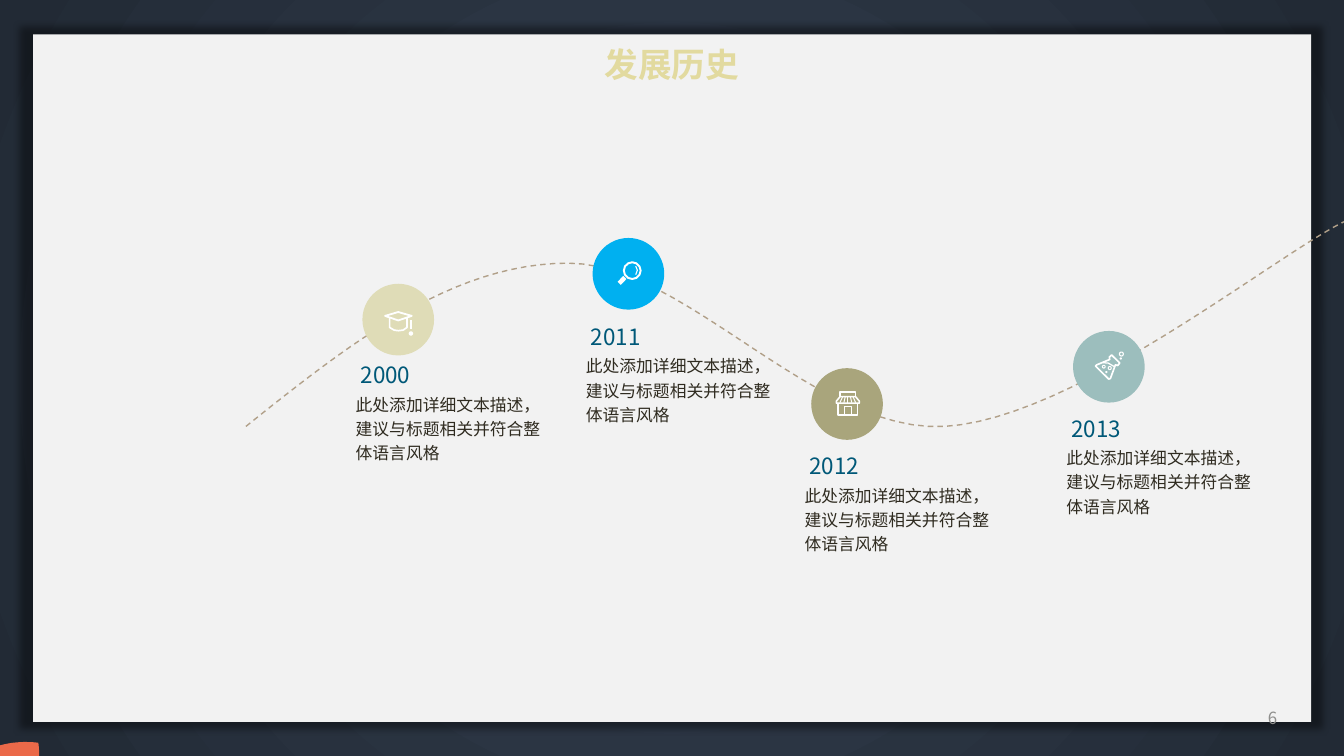
"""Build a company history slide: four milestones along a dashed curve."""
from lxml import etree
from pptx import Presentation
from pptx.dml.color import RGBColor
from pptx.enum.dml import MSO_LINE
from pptx.enum.shapes import MSO_CONNECTOR, MSO_SHAPE
from pptx.enum.text import MSO_ANCHOR, PP_ALIGN
from pptx.oxml.ns import qn
from pptx.util import Pt

DASH = MSO_LINE.DASH
STRAIGHT = MSO_CONNECTOR.STRAIGHT
OVAL, RECT = MSO_SHAPE.OVAL, MSO_SHAPE.RECTANGLE
TOP, MIDDLE = MSO_ANCHOR.TOP, MSO_ANCHOR.MIDDLE
LEFT, CENTER, RIGHT = PP_ALIGN.LEFT, PP_ALIGN.CENTER, PP_ALIGN.RIGHT

FONT = "Noto Sans CJK SC"
COLORS = {
    "glow": "333F50", "edge": "222A35", "panel": "F2F2F2", "title": "E2DA9F",
    "curve": "B1A089", "year": "005878", "body": "2F2B20", "page": "8F8F8D",
    "white": "FFFFFF", "corner": "EB6949", "black": "000000",
    "sand": "DFDCB7", "sky": "00B0F0", "olive": "A9A57C", "teal": "9CBEBD",
}
TITLE = "发展历史"
BODY = "此处添加详细文本描述，建议与标题相关并符合整体语言风格"
PAGE = "6"
STEPS = [
    ("2000", 284.5, 228.3, 26, "sand", "cap"),
    ("2011", 448.9, 195.6, 31.5, "sky", "lens"),
    ("2012", 605.1, 288.6, 31, "olive", "shop"),
    ("2013", 792.1, 262, 30.7, "teal", "flask"),
]
DISC = 51.2
CURVE = (175.7, 304.6), [
    ((249, 246), (322.5, 188), (406, 188)),
    ((489, 188), (582.5, 309.6), (674.6, 304.6)),
    ((766.8, 299.5), (907, 185), (960, 158.4)),
]
CORNER = (-46.8, 588.2), [
    ((-38.9, 564.5), (-20.9, 545), (-20.9, 545)),
    ((-3.6, 525.6), (27.4, 530.6), (27.4, 530.6)),
    ((27.4, 530.6), (32.4, 561.6), (13, 578.2)),
    ((13, 578.2), (-6.5, 596.9), (-30.2, 604.8)),
]
ICONS = {
    "cap": ([
        ([(-9.4, -2.6), (0, -5.4), (9.6, -2.6), (0, 0.6)], 1.3, True),
        ([(-6.2, -1.2), (-6.2, 5.6), (-3, 7.5), (0, 7.9), (3.5, 7.5),
          (6.2, 5.6), (6.2, -1.2)], 1.2, False),
        ([(9, 0.4), (9, 6.8)], 1.3, False),
    ], [(9, 9.9, 1.6, 0)]),
    "lens": ([
        ([(-2.6, 2.6), (-6.6, 6.8)], 3.2, False),
        ([(5.2, -5.5), (6.4, -2.6), (5.2, 0.6)], 0.8, False),
    ], [(2.7, -2.3, 6, 1.4)]),
    "shop": ([
        ([(-5, -8.7), (6, -8.7), (6, -5.5), (-5, -5.5)], 1, True),
        ([(-5, -5.3), (-7.7, -2), (-7.7, -0.6), (8.7, -0.6), (8.7, -2),
          (6, -5.3)], 1.1, True),
        ([(-6.3, 0), (-6.3, 8), (7.3, 8), (7.3, 0)], 1.1, False),
        ([(-1.8, 8), (-1.8, 1.6), (2.8, 1.6), (2.8, 8)], 0.5, False),
    ] + [([(0.5 + 1.9 * k, -5), (0.5 + 2.8 * k, -1)], 0.7, False)
         for k in range(-2, 3)], []),
    "flask": ([
        ([(-9.5, -0.5), (-8.8, -1.3), (0.6, -5.2), (0.4, -7), (2, -8.4),
          (7.8, -2.7), (6.3, -0.9), (4.7, -1.4), (1.1, 8.4), (-0.1, 8.8)],
         1.2, True),
        ([(-4.2, -2.9), (-0.5, -2.6), (4, 0)], 0.9, False),
    ], [(0.6, 0.9, 1.1, 0.7), (-3.7, -0.1, 1, 0.7), (8.9, -9.1, 1.4, 0.8),
        (-1.8, 3.8, 0.8, 0), (8.5, -5.9, 0.8, 0)]),
}


def rgb(name):
    return RGBColor.from_string(COLORS[name])


def paint(shape, color, width=0):
    shape.shadow.inherit = False
    if width:
        shape.fill.background()
        shape.line.color.rgb = rgb(color)
        shape.line.width = Pt(width)
    else:
        shape.fill.solid()
        shape.fill.fore_color.rgb = rgb(color)
        shape.line.fill.background()


def write(shape, text, size, color, align=LEFT, anchor=TOP, inset=0, bold=False):
    frame = shape.text_frame
    frame.word_wrap = True
    frame.vertical_anchor = anchor
    frame.margin_left = frame.margin_right = Pt(inset)
    frame.margin_top = frame.margin_bottom = Pt(inset)
    para = frame.paragraphs[0]
    para.alignment = align
    run = para.add_run()
    run.text = text
    font = run.font
    font.name, font.size, font.bold = FONT, Pt(size), bold
    font.color.rgb = rgb(color)
    etree.SubElement(font._element, qn("a:ea")).set("typeface", FONT)
    return para


def label(shapes, box, *args, **more):
    return write(shapes.add_textbox(*map(Pt, box)), *args, **more)


def trace(shapes, points, closed):
    spots = [(Pt(x), Pt(y)) for x, y in points]
    pen = shapes.build_freeform(*spots[0], scale=1.0)
    pen.add_line_segments(spots[1:], close=closed)
    return pen.convert_to_shape()


def disc(shapes, x, y, r, color, width=0):
    box = map(Pt, (x - r, y - r, 2 * r, 2 * r))
    paint(shapes.add_shape(OVAL, *box), color, width)


def bezier(start, bends, count=24):
    points = [start]
    for bend in bends:
        axes = list(zip(points[-1], *bend))
        for t in (step / count for step in range(1, count + 1)):
            u = 1 - t
            points.append(tuple(
                u**3 * p + 3 * u * u * t * q + 3 * u * t * t * r + t**3 * s
                for p, q, r, s in axes))
    return points


def icon(shapes, x, y, strokes, dots):
    for points, width, closed in strokes:
        spots = [(x + dx, y + dy) for dx, dy in points]
        if len(spots) == 2:
            bar = shapes.add_connector(STRAIGHT, *[Pt(v) for p in spots for v in p])
            bar.line.color.rgb = rgb("white")
            bar.line.width = Pt(width)
            etree.SubElement(bar._element.spPr, qn("a:effectLst"))
        else:
            paint(trace(shapes, spots, closed), "white", width)
    for dx, dy, r, width in dots:
        disc(shapes, x + dx, y + dy, r, "white", width)


def backdrop(slide):
    fill = slide.background.fill
    fill.gradient()
    for stop, name, spot in zip(fill.gradient_stops, ("glow", "edge"), (0, 1)):
        stop.color.rgb = rgb(name)
        stop.position = spot
    grad = slide.element.find(".//" + qn("a:gradFill"))
    grad.remove(grad.find(qn("a:lin")))
    ring = etree.SubElement(grad, qn("a:path"), {"path": "circle"})
    etree.SubElement(ring, qn("a:fillToRect"), dict.fromkeys("ltrb", "50000"))
    panel = slide.shapes.add_shape(RECT, Pt(23.6), Pt(24.6), Pt(913), Pt(491))
    paint(panel, "panel")
    glow = etree.SubElement(panel.element.spPr.find(qn("a:effectLst")), qn("a:outerShdw"), {
        "blurRad": str(Pt(5)), "sx": "102000", "sy": "102000", "algn": "ctr"})
    tone = etree.SubElement(glow, qn("a:srgbClr"), {"val": COLORS["black"]})
    etree.SubElement(tone, qn("a:alpha"), {"val": "40000"})
    panel.element.getparent().insert(2, panel.element)


deck = Presentation()
deck.slide_width, deck.slide_height = Pt(960), Pt(540)
slide = deck.slides.add_slide(deck.slide_layouts[5])
shapes = slide.shapes
backdrop(slide)
title = shapes.title
title.left, title.top, title.width, title.height = map(Pt, (240, 25, 480, 42))
write(title, TITLE, 24, "title", CENTER, MIDDLE, bold=True)
curve = trace(shapes, bezier(*CURVE), False)
paint(curve, "curve", 1)
curve.line.dash_style = DASH
for year, x, y, drop, color, art in STEPS:
    disc(shapes, x, y, DISC / 2, color)
    icon(shapes, x, y, *ICONS[art])
    left, top = x - 30.4, y + drop
    label(shapes, (left, top, 121.7, 26.6), year, 16, "year", inset=3.6)
    para = label(shapes, (left, top + 24.5, 132.5, 97), BODY, 12, "body")
    para.line_spacing = 1.2
label(shapes, (882, 498.5, 37.4, 28.8), PAGE, 12, "page", RIGHT, MIDDLE, 7.2)
paint(trace(shapes, bezier(*CORNER), True), "corner")
deck.save("out.pptx")
